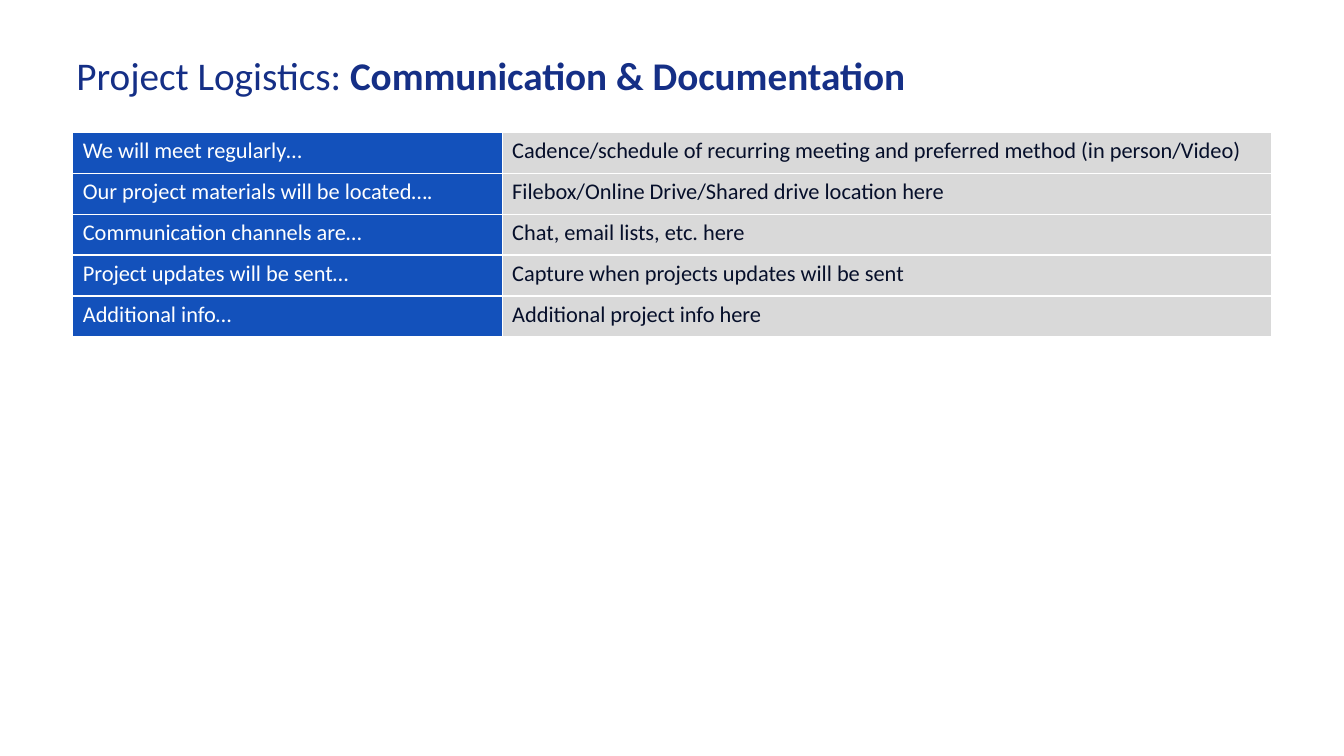
from lxml.etree import SubElement
from pptx import Presentation
from pptx.dml.color import RGBColor
from pptx.enum.text import MSO_ANCHOR
from pptx.oxml.ns import qn
from pptx.util import Pt

# Content
TITLE = [("Project Logistics: ", False), ("Communication & Documentation", True)]
ROWS = [
    ("We will meet regularly…",
     "Cadence/schedule of recurring meeting and preferred method (in person/Video)"),
    ("Our project materials will be located….",
     "Filebox/Online Drive/Shared drive location here"),
    ("Communication channels are…", "Chat, email lists, etc. here"),
    ("Project updates will be sent…", "Capture when projects updates will be sent"),
    ("Additional info…", "Additional project info here"),
]

# Style: width, fill and text colour of each column
COLS = [(306.7, "1351BB", "FFFFFF"), (549.4, "D9D9D9", "060F2A")]
FONT, NAVY, WHITE = "Calibri", "152F86", "FFFFFF"
LEFT, TOP, ROW_H = 52, 94.6, 29.2


def color(code):
    return RGBColor.from_string(code)


def style(font, size, code):
    font.name, font.size = FONT, Pt(size)
    font.color.rgb = color(code)


def border(cell, code, width):
    props = cell._tc.get_or_add_tcPr()
    for side in ("lnL", "lnR", "lnT", "lnB"):
        line = SubElement(props, qn("a:" + side), w=str(Pt(width)))
        fill = SubElement(line, qn("a:solidFill"))
        SubElement(fill, qn("a:srgbClr"), val=code)


deck = Presentation()
deck.slide_width, deck.slide_height = Pt(960), Pt(540)
slide = deck.slides.add_slide(deck.slide_layouts[6])

# Title
frame = slide.shapes.add_textbox(Pt(47.5), Pt(28.8), Pt(627), Pt(53.3)).text_frame
frame.word_wrap = True
frame.vertical_anchor = MSO_ANCHOR.MIDDLE
head = frame.paragraphs[0]
head.line_spacing = 0.9
style(head.font, 28, NAVY)
for text, bold in TITLE:
    run = head.add_run()
    run.text, run.font.bold = text, bold

# Table
width = sum(col[0] for col in COLS)
table = slide.shapes.add_table(len(ROWS), len(COLS), Pt(LEFT), Pt(TOP),
                               Pt(width), Pt(ROW_H * len(ROWS))).table
table.first_row = table.horz_banding = False
for row in table.rows:
    row.height = Pt(ROW_H)
for c, (wide, back, ink) in enumerate(COLS):
    table.columns[c].width = Pt(wide)
    for r, texts in enumerate(ROWS):
        cell = table.cell(r, c)
        border(cell, WHITE, 1)
        cell.fill.solid()
        cell.fill.fore_color.rgb = color(back)
        cell.text = texts[c]
        style(cell.text_frame.paragraphs[0].font, 16, ink)

deck.save("out.pptx")
